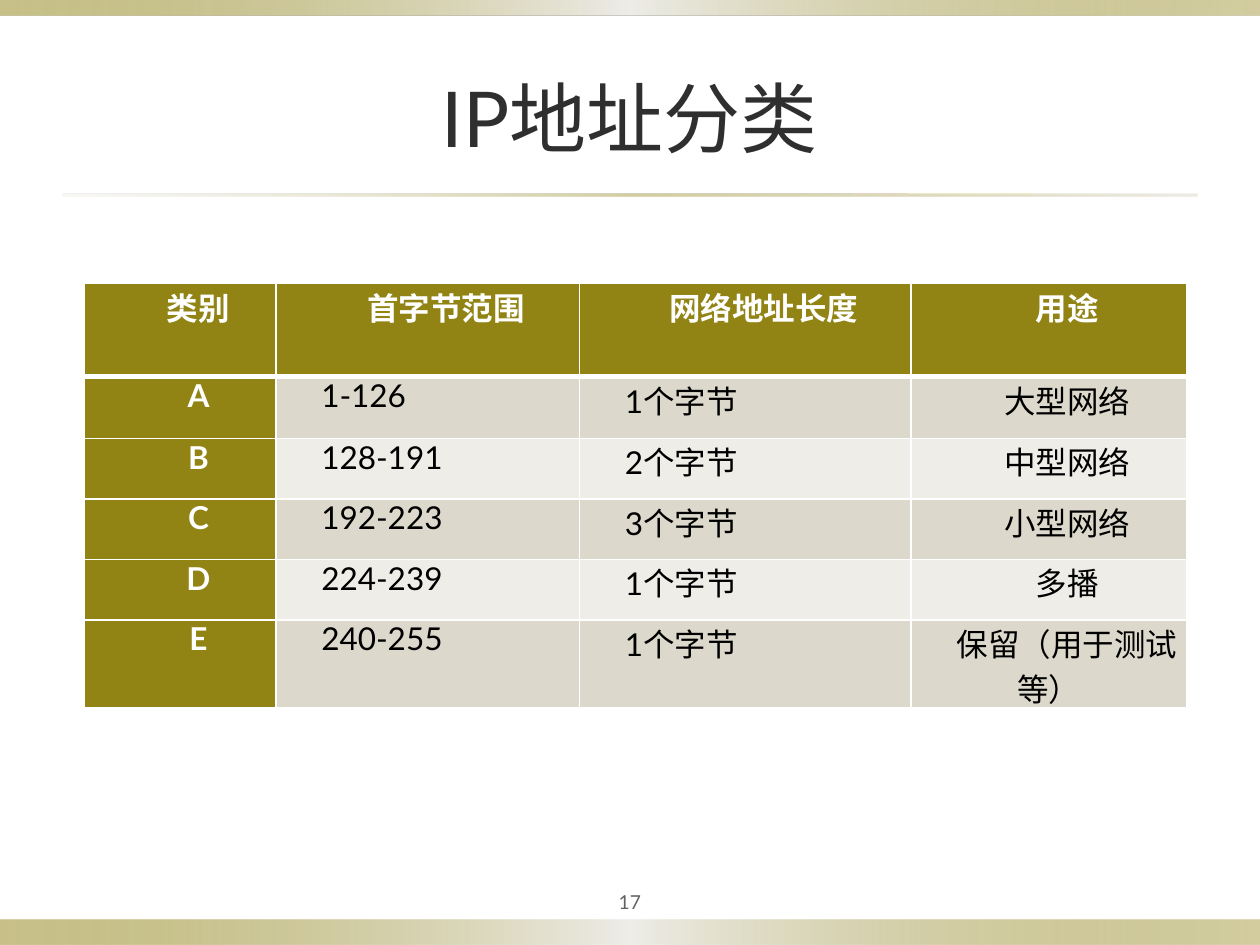
from lxml import etree
from pptx import Presentation
from pptx.dml.color import RGBColor
from pptx.enum.shapes import MSO_SHAPE
from pptx.enum.text import MSO_ANCHOR, PP_ALIGN
from pptx.oxml import parse_xml
from pptx.oxml.ns import nsdecls, qn
from pptx.util import Inches, Pt

RECT = MSO_SHAPE.RECTANGLE
MIDDLE = MSO_ANCHOR.MIDDLE
LEFT, CENTER = PP_ALIGN.LEFT, PP_ALIGN.CENTER

FONT = "Lato"
WIDTH, HEIGHT = 10, 7.5
COLORS = {
    "olive": "918415",
    "sand": "DCD9CC",
    "pale": "EEEDE8",
    "white": "FFFFFF",
    "black": "000000",
    "title": "2F2F2F",
    "number": "636363",
}

# Gradient stops: position in %, colour, opacity in %
BAND = [(0, "olive", 50), (50, "pale", 100), (100, "olive", 40)]
RULE = [(0, "sand", 20), (50, "olive", 40), (100, "sand", 50)]

COLUMNS = [1.52, 2.41, 2.63, 2.19]
ROWS = [0.74, 0.49, 0.48, 0.48, 0.48, 0.7]
COLUMN_ALIGN = [CENTER, LEFT, LEFT, CENTER]
ADDRESS_CLASSES = [
    ("类别", "首字节范围", "网络地址长度", "用途"),
    ("A", "1-126", "1个字节", "大型网络"),
    ("B", "128-191", "2个字节", "中型网络"),
    ("C", "192-223", "3个字节", "小型网络"),
    ("D", "224-239", "1个字节", "多播"),
    ("E", "240-255", "1个字节", "保留（用于测试等）"),
]


def rgb(name):
    return RGBColor.from_string(COLORS[name])


def style(p, size, color, align, bold=False):
    p.alignment = align
    p.font.name = FONT
    p.font.size = Pt(size)
    p.font.bold = bold
    p.font.color.rgb = rgb(color)


def add_gradient_bar(s, left, top, width, height, stops):
    bar = s.shapes.add_shape(RECT, *map(Inches, (left, top, width, height)))
    bar.shadow.inherit = False
    bar.line.fill.background()
    bar.fill.gradient()
    bar.fill.gradient_angle = 0
    stop_list = bar.fill._fill._gradFill.find(qn("a:gsLst"))
    stop_list.clear()
    for position, color, opacity in stops:
        gs = etree.SubElement(stop_list, qn("a:gs"), pos=str(position * 1000))
        clr = etree.SubElement(gs, qn("a:srgbClr"), val=COLORS[color])
        etree.SubElement(clr, qn("a:alpha"), val=str(opacity * 1000))


def add_text(s, text, left, top, width, height, size, color, inset):
    tf = s.shapes.add_textbox(*map(Inches, (left, top, width, height))).text_frame
    tf.word_wrap = True
    tf.vertical_anchor = MIDDLE
    tf.margin_left = tf.margin_right = Inches(inset)
    tf.margin_top = tf.margin_bottom = Inches(0.05)
    p = tf.paragraphs[0]
    p.text = text
    style(p, size, color, CENTER)


def set_borders(cell, widths):
    tcPr = cell._tc.get_or_add_tcPr()
    for side, width in widths.items():
        tcPr.append(parse_xml(
            f'<a:ln{side} {nsdecls("a")} w="{Pt(width)}"><a:solidFill>'
            f'<a:srgbClr val="{COLORS["white"]}"/></a:solidFill></a:ln{side}>'))


def fill_cell(cell, text, row, col):
    head = row == 0 or col == 0
    # Thick line under the header row, thin lines elsewhere
    set_borders(cell, {"L": 1, "R": 1, "T": 3 if row == 1 else 1,
                       "B": 3 if row == 0 else 1})
    cell.fill.solid()
    cell.fill.fore_color.rgb = rgb("olive" if head else "sand" if row % 2 else "pale")
    cell.margin_left = cell.margin_right = Inches(0.07)
    cell.margin_top = cell.margin_bottom = 0
    p = cell.text_frame.paragraphs[0]
    p.text = text
    p.space_before = p.space_after = Pt(12)
    p._p.get_or_add_pPr().set("indent", str(Inches(0.29)))
    style(p, 18, "white" if head else "black",
          CENTER if row == 0 else COLUMN_ALIGN[col], head)


def add_class_table(s, left, top):
    table = s.shapes.add_table(
        len(ROWS), len(COLUMNS), Inches(left), Inches(top),
        Inches(sum(COLUMNS)), Inches(sum(ROWS))).table
    for column, width in zip(table.columns, COLUMNS):
        column.width = Inches(width)
    for row, height in zip(table.rows, ROWS):
        row.height = Inches(height)
    for r, texts in enumerate(ADDRESS_CLASSES):
        for c, text in enumerate(texts):
            fill_cell(table.cell(r, c), text, r, c)


def main():
    prs = Presentation()
    prs.slide_width, prs.slide_height = Inches(WIDTH), Inches(HEIGHT)
    s = prs.slides.add_slide(prs.slide_layouts[6])
    margin = WIDTH * 0.05
    inner = WIDTH - 2 * margin

    # Bands at the bottom and top edges, rule under the title
    add_gradient_bar(s, 0, HEIGHT - 0.2, WIDTH, 0.2, BAND)
    add_gradient_bar(s, 0, 0, WIDTH, 0.12, BAND)
    add_gradient_bar(s, margin, 1.54, inner, 0.02, RULE)

    # Title and page number
    add_text(s, "IP地址分类", margin, HEIGHT * 0.04, inner, 1.25, 44, "title", 0.1)
    add_text(s, "17", WIDTH * 0.45, 7, WIDTH * 0.1, 0.31, 11, "number", 0.05)

    # Address classes
    add_class_table(s, 0.67, HEIGHT * 0.3)
    prs.save("out.pptx")


if __name__ == "__main__":
    main()
